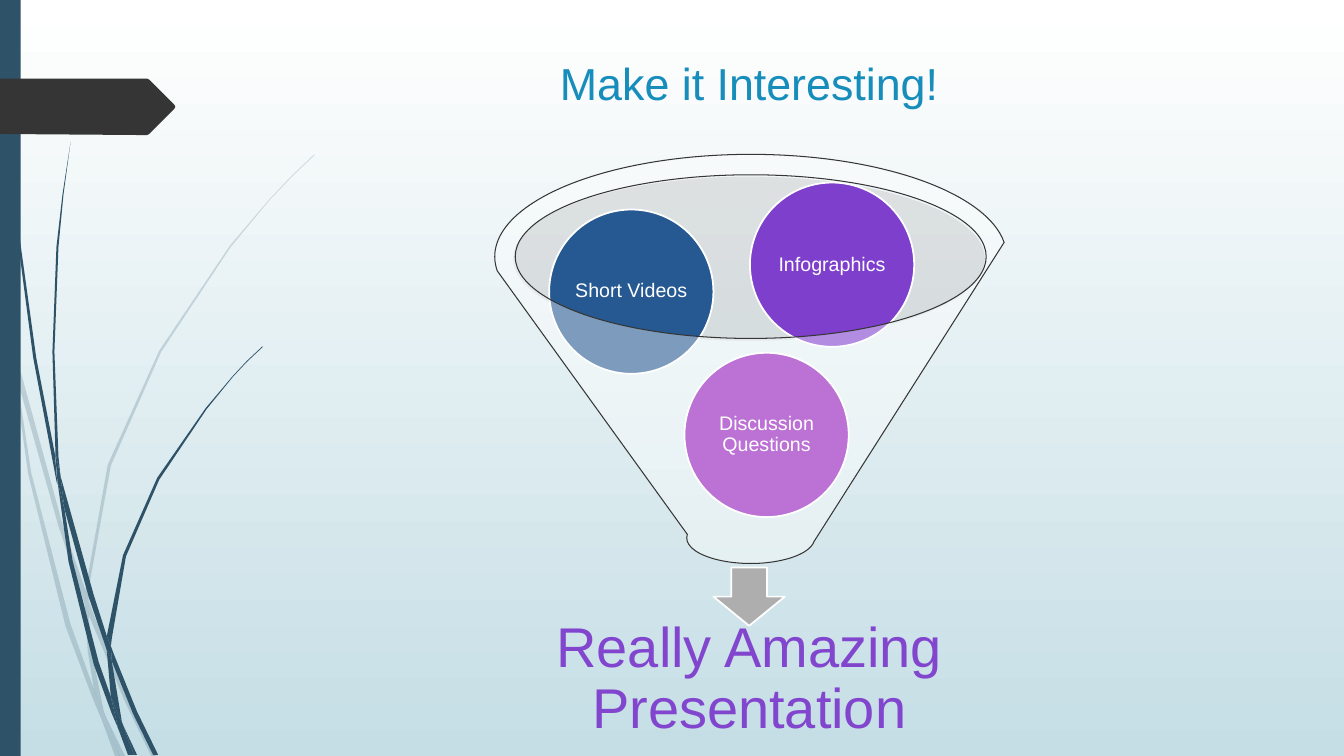
from pptx import Presentation
from pptx.dml.color import RGBColor
from pptx.enum.shapes import MSO_SHAPE
from pptx.enum.text import MSO_ANCHOR, MSO_AUTO_SIZE, PP_ALIGN
from pptx.oxml.ns import qn
from pptx.util import Cm, Pt
from lxml.etree import SubElement

SLATE, CHARCOAL, WHITE = "2E5369", "353535", "FFFFFF"
HUNDREDTH_INCH = Cm(0.0254)

PALE_BLADES = [
    [(11, 350), (9, 322), (0, 282), (0, 299), (10, 344)],
    [(58, 522), (84, 599), (85, 586), (62, 520), (14, 345), (17, 376)],
    [(92, 607), (88, 596), (88, 610), (123, 694), (150, 750), (155, 750), (127, 692)],
    [(119, 750), (124, 750), (105, 711)],
    [(93, 683), (70, 619), (31, 469), (17, 376), (11, 350), (28, 470),
     (65, 621), (92, 693), (101, 714), (99, 707)],
    [(84, 599), (87, 646), (93, 683), (96, 692), (105, 711), (103, 706),
     (91, 646), (88, 610), (88, 608)],
    [(88, 584), (110, 462), (160, 349), (229, 245), (268, 198), (290, 175),
     (312, 154), (312, 153), (289, 175), (268, 197), (228, 244), (158, 348),
     (107, 461), (85, 584), (85, 586), (88, 596)],
    [(101, 714), (114, 750), (119, 750)],
    [(88, 608), (88, 610), (88, 596), (85, 586), (84, 599)],
    [(96, 692), (93, 683), (99, 707), (101, 714), (119, 750), (105, 711)],
]
DARK_BLADES = [
    [(7, 110), (17, 233), (33, 355), (56, 477), (57, 481), (55, 457), (55, 453),
     (36, 355), (19, 232), (8, 109), (5, 48), (4, 0), (3, 0), (4, 48)],
    [(88, 592), (106, 645), (106, 633), (106, 631), (93, 590), (60, 472), (64, 505)],
    [(113, 649), (110, 641), (111, 656), (132, 708), (152, 749), (157, 749), (136, 706)],
    [(110, 691), (98, 657), (72, 556), (64, 505), (57, 477), (68, 557),
     (93, 659), (111, 708), (117, 722), (116, 717)],
    [(60, 472), (58, 453), (54, 349), (58, 245), (63, 193), (70, 141),
     (62, 193), (56, 245), (52, 349), (55, 449)],
    [(133, 749), (136, 749), (122, 719)],
    [(57, 477), (64, 505), (60, 472), (55, 449), (55, 453)],
    [(111, 633), (125, 552), (158, 476), (205, 406), (231, 374), (245, 359),
     (261, 344), (260, 344), (245, 358), (231, 373), (204, 405), (156, 474),
     (122, 551), (106, 631), (110, 641)],
    [(117, 722), (127, 749), (131, 749)],
    [(106, 645), (110, 691), (116, 706), (122, 719), (121, 716), (111, 656), (109, 651)],
    [(106, 645), (109, 651), (111, 656), (110, 641), (106, 631), (106, 633)],
    [(116, 706), (110, 691), (116, 717), (117, 722), (130, 749), (133, 749), (122, 719)],
]
PAGE_TAG = [(173, 108), (148, 133), (146, 134), (136, 134), (0, 133), (0, 78),
            (146, 78), (148, 79), (173, 104), (174, 106)]
INGREDIENTS = [
    ("Discussion Questions", "9013B9", 5.34, 5.0),
    ("Short Videos", "265991", 1.93, 1.39),
    ("Infographics", "7E40CC", 6.99, 0.71),
]


def rgb(color):
    return RGBColor.from_string(color)


def paint(shape, color, opacity=100, outline=None, weight=1.25):
    shape.shadow.inherit = False
    shape.fill.solid()
    shape.fill.fore_color.rgb = rgb(color)
    if opacity < 100:
        tint = shape.fill._xPr.find(qn("a:solidFill"))[0]
        SubElement(tint, qn("a:alpha")).set("val", str(opacity * 1000))
    if outline:
        shape.line.color.rgb = rgb(outline)
        shape.line.width = Pt(weight)
    else:
        shape.line.fill.background()


def write(shape, wording, size, color, anchor, inset, spacing):
    frame = shape.text_frame
    frame.word_wrap = True
    frame.auto_size = MSO_AUTO_SIZE.NONE
    frame.vertical_anchor = anchor
    frame.margin_left = frame.margin_right = Cm(inset)
    frame.margin_top = frame.margin_bottom = Cm(inset)
    frame.text = wording
    paragraph = frame.paragraphs[0]
    paragraph.alignment = PP_ALIGN.CENTER
    paragraph.line_spacing = spacing
    font = paragraph.runs[0].font
    font.name, font.size = "Arial", Pt(size)
    font.color.rgb = rgb(color)


def add_outline(shapes, points, left, top, color, opacity=100):
    builder = shapes.build_freeform(*points[0], scale=HUNDREDTH_INCH)
    builder.add_line_segments(points[1:], close=True)
    paint(builder.convert_to_shape(Cm(left), Cm(top)), color, opacity)


def add_backdrop(slide):
    fill = slide.background.fill
    fill.gradient()
    fill.gradient_angle = 270
    for stop, color, position in zip(fill.gradient_stops, (WHITE, "C5DEE5"), (0, 1)):
        stop.color.rgb = rgb(color)
        stop.position = position


def add_side_decoration(slide, left, top, height):
    for blades, opacity in ((PALE_BLADES, 20), (DARK_BLADES, 100)):
        grass = slide.shapes.add_group_shape().shapes
        for blade in blades:
            add_outline(grass, blade, left, top, SLATE, opacity)
    edge = slide.shapes.add_shape(
        MSO_SHAPE.RECTANGLE, Cm(left), Cm(top), Cm(0.52), Cm(height))
    paint(edge, SLATE)
    add_outline(slide.shapes, PAGE_TAG, left, top, CHARCOAL)


def add_heading(slide, left, top, width, height):
    heading = slide.shapes.title
    heading.left, heading.top = Cm(left), Cm(top)
    heading.width, heading.height = Cm(width), Cm(height)
    write(heading, "Make it Interesting!", 32, "178DBB", MSO_ANCHOR.TOP, 0.13, 1.0)


def add_funnel_diagram(slide, left, top, width):
    diagram = slide.shapes.add_group_shape().shapes

    def place(kind, x, y, w, h):
        return diagram.add_shape(kind, Cm(left + x), Cm(top + y), Cm(w), Cm(h))

    mouth = place(MSO_SHAPE.OVAL, 1.02, 0.56, 11.89, 4.14)
    paint(mouth, "BFBFBF", 40)
    arrow = place(MSO_SHAPE.DOWN_ARROW, 6.07, 10.41, 1.8, 1.47)
    paint(arrow, "AEAEAE", outline=WHITE)
    outcome = diagram.add_textbox(Cm(left), Cm(top + 11.86), Cm(width), Cm(2.77))
    write(outcome, "Really Amazing Presentation", 40, "8246CE",
          MSO_ANCHOR.MIDDLE, 0.79, 0.9)
    for wording, color, x, y in INGREDIENTS:
        ingredient = place(MSO_SHAPE.OVAL, x, y, 4.14, 4.14)
        paint(ingredient, color, outline=WHITE)
        write(ingredient, wording, 14, WHITE, MSO_ANCHOR.MIDDLE, 0.05, 0.9)
    funnel = place(MSO_SHAPE.FUNNEL, 0.56, 0, 12.9, 10.31)
    paint(funnel, WHITE, 40, CHARCOAL, 0.75)


def main():
    deck = Presentation()
    deck.slide_width, deck.slide_height = Cm(33.87), Cm(19.05)
    slide = deck.slides.add_slide(deck.slide_layouts.get_by_name("Title Only"))
    add_backdrop(slide)
    add_side_decoration(slide, 0, 0, 19.05)
    add_heading(slide, 12.14, 1.27, 13.49, 2.57)
    add_funnel_diagram(slide, 11.91, 3.89, 13.94)
    deck.save("out.pptx")


if __name__ == "__main__":
    main()
